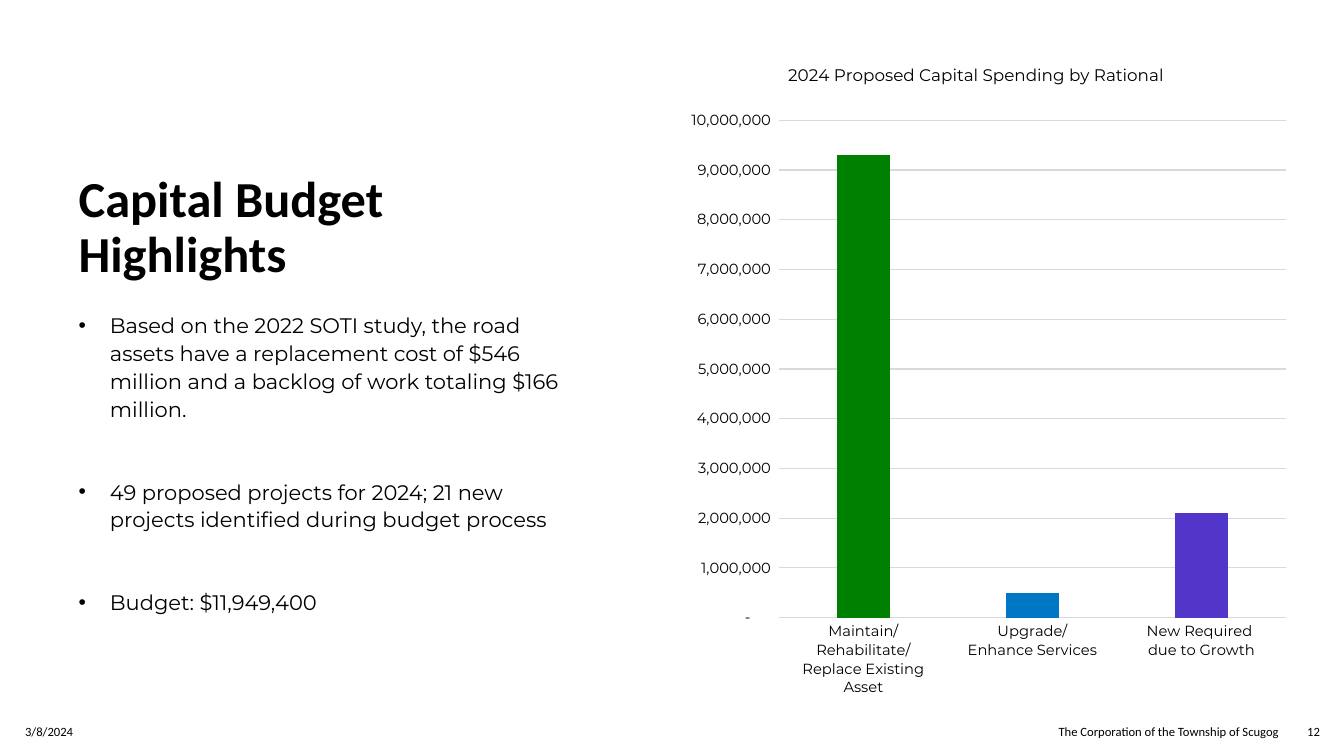
from dataclasses import dataclass
from lxml import etree
from pptx import Presentation
from pptx.chart.data import CategoryChartData
from pptx.dml.color import RGBColor
from pptx.enum.chart import XL_CHART_TYPE, XL_TICK_MARK
from pptx.enum.text import MSO_ANCHOR, MSO_AUTO_SIZE, PP_ALIGN
from pptx.oxml import parse_xml
from pptx.oxml.ns import nsdecls, qn
from pptx.util import Inches, Pt

COLUMN = XL_CHART_TYPE.COLUMN_CLUSTERED
NO_TICK = XL_TICK_MARK.NONE
TOP, MIDDLE, BOTTOM = MSO_ANCHOR.TOP, MSO_ANCHOR.MIDDLE, MSO_ANCHOR.BOTTOM
NO_FIT = MSO_AUTO_SIZE.NONE
LEFT, RIGHT, CENTER = PP_ALIGN.LEFT, PP_ALIGN.RIGHT, PP_ALIGN.CENTER


@dataclass(frozen=True)
class Theme:
    ink: str = "000000"
    grid: str = "D9D9D9"
    bars: tuple = ("008000", "0077C4", "5236CA")
    head: str = "Calibri"
    body: str = "Montserrat"
    title: float = 36
    text: float = 15
    chart: float = 12
    axis: float = 10.5
    foot: float = 9


THEME = Theme()
TITLE = "Capital Budget Highlights"
POINTS = [
    "Based on the 2022 SOTI study, the road assets have a replacement cost of "
    "$546 million and a backlog of work totaling $166 million.",
    "49 proposed projects for 2024; 21 new projects identified during budget process",
    "Budget: $11,949,400",
]
CHART_TITLE = "2024 Proposed Capital Spending by Rational"
SPENDING = {
    "Maintain/Rehabilitate/\nReplace Existing Asset": 9300000,
    "Upgrade/\nEnhance Services": 500000,
    "New Required \ndue to Growth": 2100000,
}
NUMBERS = '_-* #,##0_-;\\-* #,##0_-;_-* "-"??_-;_-@_'
FOOTERS = [
    ("3/8/2024", 0.15, 3.82, LEFT),
    ("The Corporation of the Township of Scugog", 9.71, 3.07, RIGHT),
    ("12", 12.72, 0.47, RIGHT),
]
TITLE_BOX = (0.68, 1.1, 5.12, 1.76)
BODY_BOX = (0.68, 3.03, 5.12, 3.49)
CHART_BOX = (6.67, 0.47, 6.21, 6.58)
PLOT_AREA = {"x": 0.17, "y": 0.11, "w": 0.81, "h": 0.75}
TITLE_AREA = {"x": 0.18, "y": 0.02}


def style(font, size, face, bold=False):
    font.size = Pt(size)
    font.name = face
    font.bold = bold
    font.color.rgb = RGBColor.from_string(THEME.ink)


def write(frame, lines, size, face, bold=False, align=LEFT, anchor=TOP,
          space=1.0, gap=0, bullet=False):
    frame.word_wrap = True
    frame.auto_size = NO_FIT
    frame.vertical_anchor = anchor
    for i, line in enumerate(lines):
        para = frame.add_paragraph() if i else frame.paragraphs[0]
        if bullet:
            props = para._p.get_or_add_pPr()
            props.set("marL", str(Inches(0.31)))
            props.set("indent", str(-Inches(0.31)))
            etree.SubElement(props, qn("a:buFont")).set("typeface", "Arial")
            etree.SubElement(props, qn("a:buChar")).set("char", "•")
        para.alignment = align
        para.line_spacing = space
        para.space_before = Pt(gap if i else 0)
        run = para.add_run()
        run.text = line
        style(run.font, size, face, bold)


def place(shape, box):
    shape.left, shape.top, shape.width, shape.height = map(Inches, box)


def layout(area, inner=False):
    target = '<c:layoutTarget val="inner"/>' if inner else ""
    modes = "".join(f'<c:{k}Mode val="edge"/>' for k in area if k in "xy")
    sizes = "".join(f'<c:{k} val="{v}"/>' for k, v in area.items())
    return parse_xml(f'<c:layout {nsdecls("c")}><c:manualLayout>{target}{modes}{sizes}'
                     '</c:manualLayout></c:layout>')


def arrange(parent, area, after=None, inner=False):
    for old in parent.findall(qn("c:layout")):
        parent.remove(old)
    where = 0 if after is None else parent.index(parent.find(qn(after))) + 1
    parent.insert(where, layout(area, inner))


def rule(line):
    line.color.rgb = RGBColor.from_string(THEME.grid)
    line.width = Pt(0.75)


def draw_chart(slide):
    data = CategoryChartData(number_format=NUMBERS)
    data.categories = list(SPENDING)
    data.add_series("Series 1", list(SPENDING.values()))
    chart = slide.shapes.add_chart(COLUMN, *map(Inches, CHART_BOX), data).chart
    style(chart.font, THEME.axis, THEME.body)
    chart.has_legend = False
    chart.has_title = True
    title = chart.chart_title
    write(title.text_frame, [CHART_TITLE], THEME.chart, THEME.body, align=CENTER)
    title.include_in_layout = False
    arrange(title._element, TITLE_AREA, after="c:tx")
    arrange(chart._chartSpace.chart.plotArea, PLOT_AREA, inner=True)

    for axis in (chart.category_axis, chart.value_axis):
        axis.major_tick_mark = axis.minor_tick_mark = NO_TICK
        style(axis.tick_labels.font, THEME.axis, THEME.body)
    rule(chart.category_axis.format.line)
    scale = chart.value_axis
    scale.minimum_scale, scale.maximum_scale, scale.major_unit = 0, 10000000, 1000000
    scale.format.line.fill.background()
    scale.tick_labels.number_format = NUMBERS
    scale.tick_labels.number_format_is_linked = False
    rule(scale.major_gridlines.format.line)

    plot = chart.plots[0]
    plot.gap_width, plot.overlap, plot.vary_by_categories = 219, -27, False
    for i, color in enumerate(THEME.bars):
        fill = plot.series[0].points[i].format.fill
        fill.solid()
        fill.fore_color.rgb = RGBColor.from_string(color)


def main():
    deck = Presentation()
    deck.slide_width, deck.slide_height = Inches(13.33), Inches(7.5)
    slide = deck.slides.add_slide(deck.slide_layouts[1])
    title, body = slide.shapes.title, slide.placeholders[1]
    place(title, TITLE_BOX)
    write(title.text_frame, [TITLE], THEME.title, THEME.head, bold=True,
          anchor=BOTTOM, space=0.9)
    place(body, BODY_BOX)
    write(body.text_frame, POINTS, THEME.text, THEME.body, space=1.1, gap=39.5,
          bullet=True)
    draw_chart(slide)
    for text, left, width, align in FOOTERS:
        box = slide.shapes.add_textbox(*map(Inches, (left, 7.06, width, 0.4)))
        write(box.text_frame, [text], THEME.foot, THEME.head, align=align, anchor=MIDDLE)
    deck.save("out.pptx")


if __name__ == "__main__":
    main()
